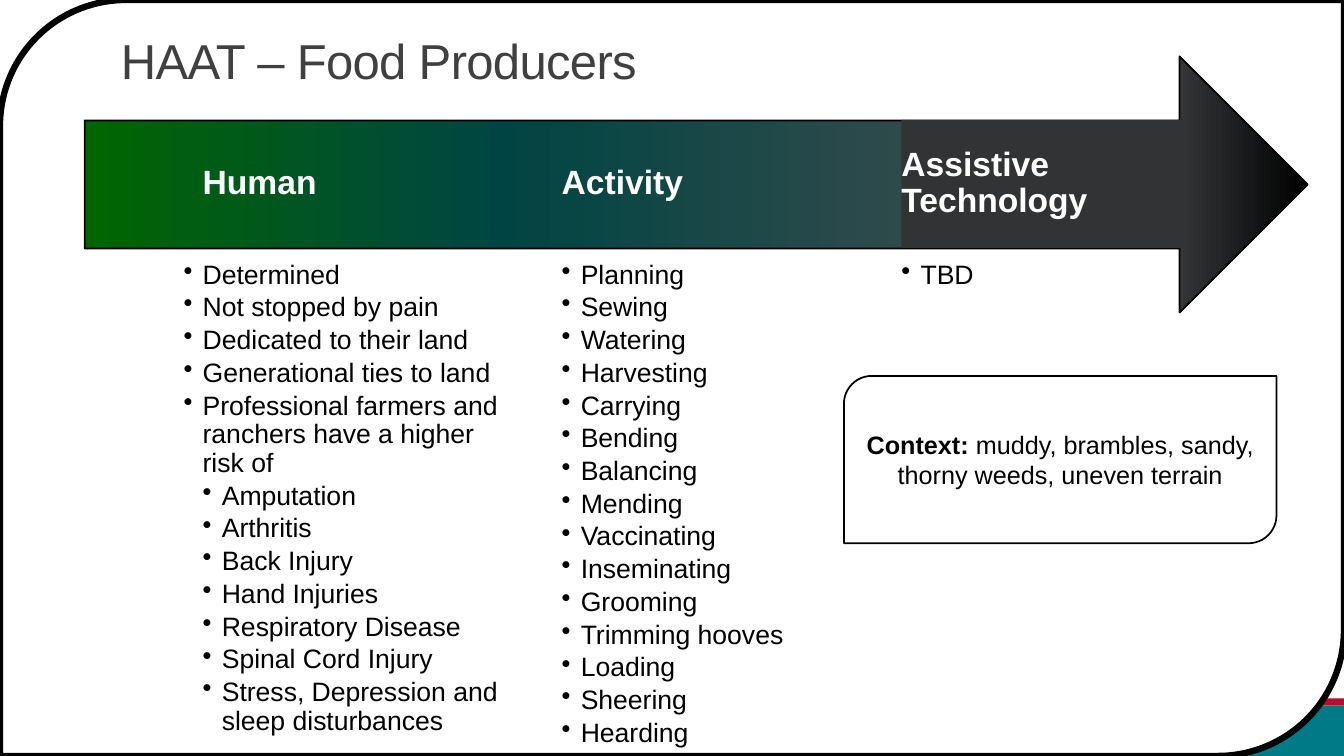
from dataclasses import dataclass
from lxml.etree import SubElement
from pptx import Presentation
from pptx.dml.color import RGBColor
from pptx.enum.shapes import MSO_SHAPE
from pptx.enum.text import MSO_ANCHOR, PP_ALIGN
from pptx.oxml import parse_xml
from pptx.oxml.ns import nsdecls, qn
from pptx.util import Inches, Pt


@dataclass(frozen=True)
class Theme:
    font: str = "Arial"
    white: str = "FFFFFF"
    black: str = "000000"
    gray: str = "404040"
    slate: str = "323335"
    teal: str = "007A86"
    red: str = "BA0C2F"
    fade: tuple = ((0, "006600"), (34, "004543"), (85, "4A4D50"), (100, "000000"))
    title: float = 35
    head: float = 24
    item: float = 19
    note: float = 18
    frame: float = 4.5
    edge: float = 1.25


THEME = Theme()
INDENT = 0.19
HEAD_TOP, HEAD_HIGH = 1.19, 1.27
LIST_TOP, LIST_HIGH = 2.59, 4.75
WIDE = 2.81

HUMAN = [
    (1, "Determined"),
    (1, "Not stopped by pain"),
    (1, "Dedicated to their land"),
    (1, "Generational ties to land"),
    (1, "Professional farmers and ranchers have a higher risk of"),
    (2, "Amputation"),
    (2, "Arthritis"),
    (2, "Back Injury"),
    (2, "Hand Injuries"),
    (2, "Respiratory Disease"),
    (2, "Spinal Cord Injury"),
    (2, "Stress, Depression and sleep disturbances"),
]
ACTIVITY = [
    (1, name)
    for name in (
        "Planning", "Sewing", "Watering", "Harvesting", "Carrying",
        "Bending", "Balancing", "Mending", "Vaccinating", "Inseminating",
        "Grooming", "Trimming hooves", "Loading", "Sheering", "Hearding",
    )
]
COLUMNS = [
    ("Assistive Technology", 8.94, 8.94, WIDE, [(1, "TBD")]),
    ("Activity", 5.57, 5.57, WIDE, ACTIVITY),
    ("Human", 2.01, 1.82, 3.19, HUMAN),
]


def color(code):
    return RGBColor.from_string(code)


def add_block(slide, kind, box, fill=None, line=0):
    block = slide.shapes.add_shape(kind, *map(Inches, box))
    block.shadow.inherit = False
    if fill:
        block.fill.solid()
        block.fill.fore_color.rgb = color(fill)
    if line:
        block.line.color.rgb = color(THEME.black)
        block.line.width = Pt(line)
    else:
        block.line.fill.background()
    return block


def add_arrow(slide, box):
    arrow = add_block(slide, MSO_SHAPE.RIGHT_ARROW, box, line=THEME.edge)
    stops = "".join(
        f'<a:gs pos="{at * 1000}"><a:srgbClr val="{code}"/></a:gs>'
        for at, code in THEME.fade
    )
    fade = parse_xml(
        f'<a:gradFill {nsdecls("a")} rotWithShape="1"><a:gsLst>{stops}</a:gsLst>'
        '<a:lin ang="0" scaled="0"/></a:gradFill>'
    )
    arrow.element.spPr.find(qn("a:prstGeom")).addnext(fade)


def add_text(slide, box, insets, anchor):
    frame = slide.shapes.add_textbox(*map(Inches, box)).text_frame
    frame.word_wrap = True
    frame.vertical_anchor = anchor
    side, edge = map(Inches, insets)
    frame.margin_left = frame.margin_right = side
    frame.margin_top = frame.margin_bottom = edge
    return frame


def set_font(para, size, code, bold=None):
    font = para.font
    font.name = THEME.font
    font.size = Pt(size)
    font.color.rgb = color(code)
    font.bold = bold


def add_title(slide, text):
    frame = add_text(slide, (1.1, 0.2, 10.09, 0.74), (0.1, 0.05), MSO_ANCHOR.BOTTOM)
    para = frame.paragraphs[0]
    run = para.add_run()
    run.text = text
    run.font._element.set("spc", "-50")
    para.line_spacing = 0.85
    set_font(para, THEME.title, THEME.gray)


def add_head(slide, text, left):
    box = left, HEAD_TOP, WIDE, HEAD_HIGH
    para = add_text(slide, box, (0, 0.27), MSO_ANCHOR.MIDDLE).paragraphs[0]
    para.text = text
    para.line_spacing = 0.9
    set_font(para, THEME.head, THEME.white, True)


def add_list(slide, items, left, width):
    box = left, LIST_TOP, width, LIST_HIGH
    frame = add_text(slide, box, (0, 0), MSO_ANCHOR.TOP)
    for place, (level, text) in enumerate(items):
        para = frame.add_paragraph() if place else frame.paragraphs[0]
        para.text = text
        para.level = level
        props = para._p.get_or_add_pPr()
        props.set("marL", str(Inches(INDENT * level)))
        props.set("indent", str(-Inches(INDENT)))
        SubElement(props, qn("a:buChar")).set("char", "•")
        para.line_spacing = 0.9
        para.space_after = Pt(THEME.item * 0.15)
        set_font(para, THEME.item, THEME.black)


def add_note(slide, label, text):
    box = 8.37, 3.73, 4.29, 1.66
    note = add_block(slide, MSO_SHAPE.ROUND_2_DIAG_RECTANGLE, box, THEME.white, THEME.edge)
    frame = note.text_frame
    frame.word_wrap = True
    frame.vertical_anchor = MSO_ANCHOR.MIDDLE
    para = frame.paragraphs[0]
    para.alignment = PP_ALIGN.CENTER
    for part, bold in ((label, True), (text, False)):
        run = para.add_run()
        run.text = part
        run.font.bold = bold
    set_font(para, THEME.note, THEME.black)


def main():
    deck = Presentation()
    deck.slide_width, deck.slide_height = Inches(13.33), Inches(7.5)
    slide = deck.slides.add_slide(deck.slide_layouts[6])
    add_block(slide, MSO_SHAPE.RECTANGLE, (0, 7, 13.33, 0.5), THEME.teal)
    add_block(slide, MSO_SHAPE.RECTANGLE, (0, 6.93, 13.33, 0.07), THEME.red)
    page = 0, 0, 13.33, 7.5
    add_block(slide, MSO_SHAPE.ROUND_2_DIAG_RECTANGLE, page, THEME.white, THEME.frame)
    add_arrow(slide, (0.84, 0.56, 12.13, 2.54))
    add_block(slide, MSO_SHAPE.RECTANGLE, (8.94, HEAD_TOP, WIDE, HEAD_HIGH), THEME.slate)
    for head, left, start, width, items in COLUMNS:
        add_list(slide, items, start, width)
        add_head(slide, head, left)
    add_title(slide, "HAAT – Food Producers")
    add_note(slide, "Context: ", "muddy, brambles, sandy, thorny weeds, uneven terrain")
    deck.save("out.pptx")


if __name__ == "__main__":
    main()
